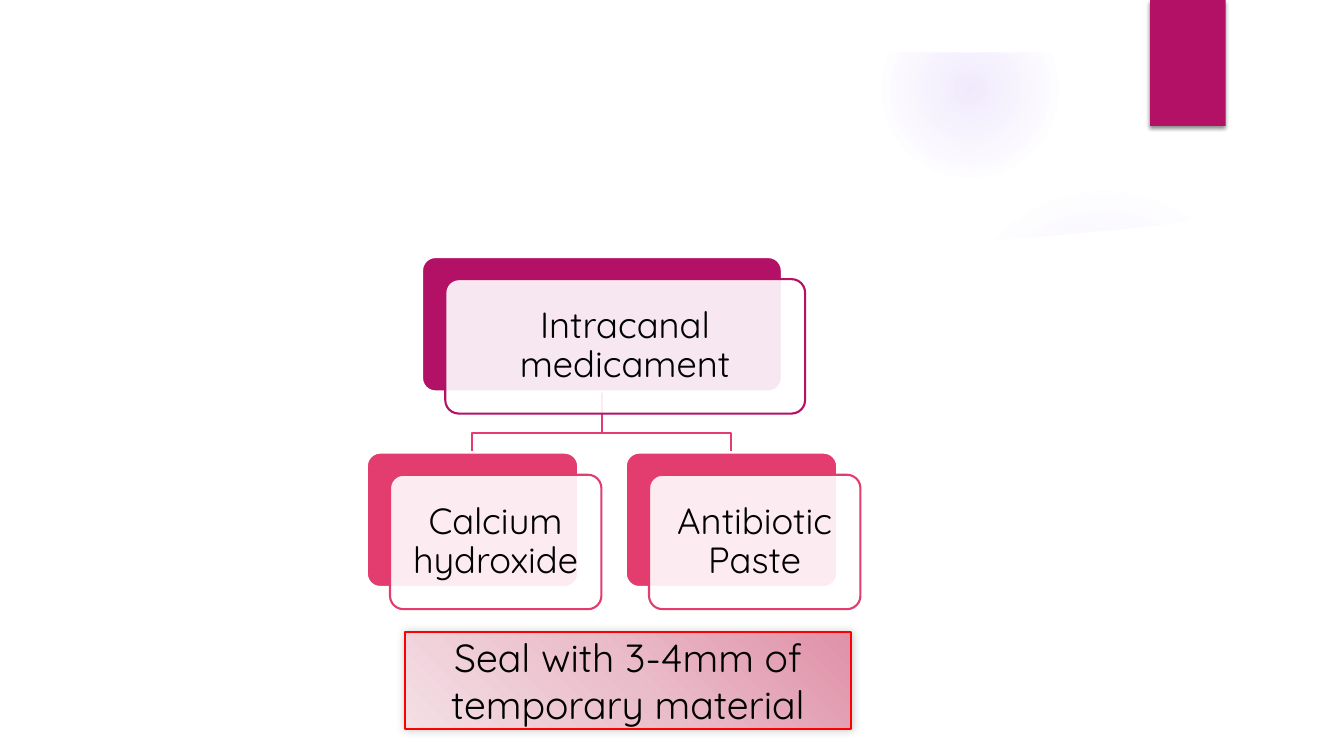
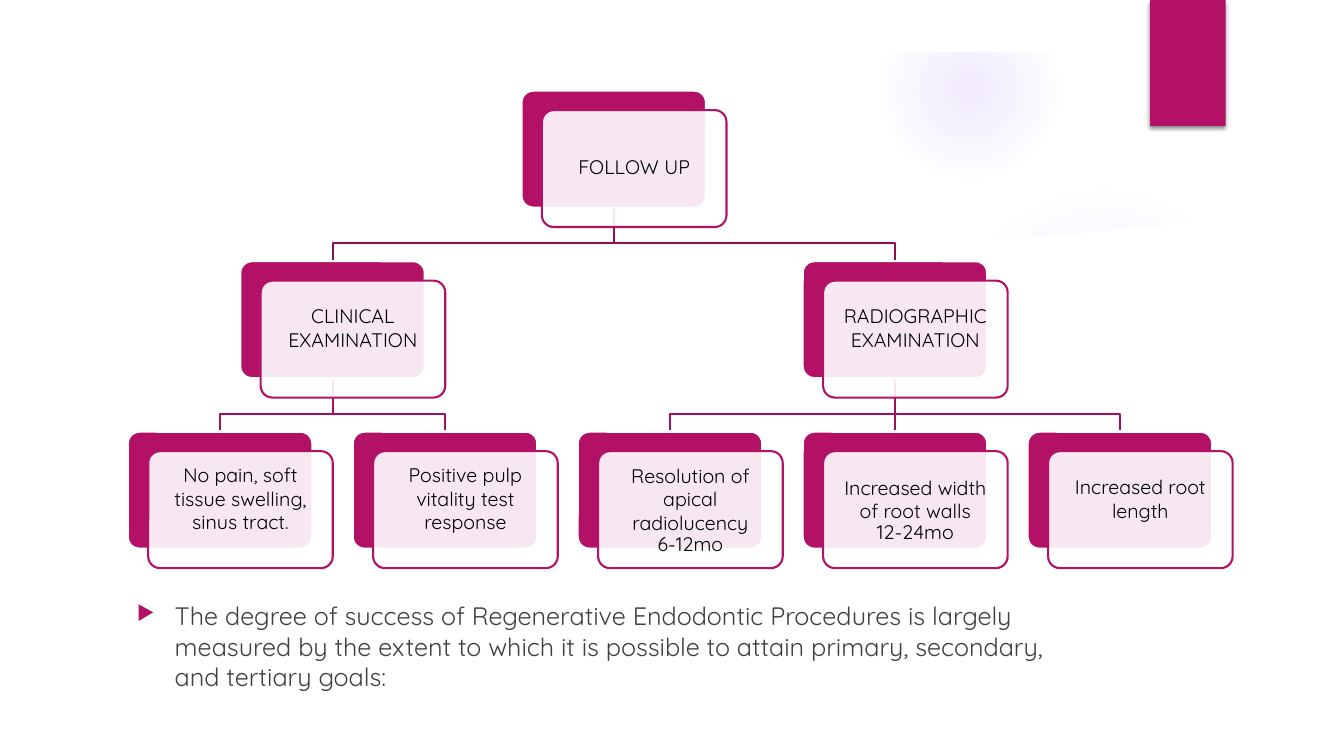
import dataclasses

import pptx
import pptx.dml.color
import pptx.enum.shapes
import pptx.enum.text
import pptx.oxml
import pptx.oxml.ns
import pptx.util
from lxml import etree

Pt = pptx.util.Pt
SHAPES = pptx.enum.shapes.MSO_SHAPE
COLOURS = {
    "accent": "B31166", "rose": "E33D6F", "trunk": "8F0E52", "branch": "A20F5D",
    "glow": "9B6BF2", "white": "FFFFFF", "black": "000000", "body": "404040",
    "red": "FF0000", "seal_dark": "E091A9", "seal_mid": "EABDCA", "seal_light": "F4DFE5",
}


@dataclasses.dataclass
class Node:
    """A card of a tree; raised text leaves one line free below it."""
    text: str
    children: tuple = ()
    raised: bool = False


@dataclasses.dataclass
class TreeStyle:
    first_leaf: float  # centre of the leftmost leaf
    leaf_pitch: float
    top: float
    level_pitch: float
    widths: tuple  # one per level
    height: float
    offset: tuple  # front panel against back panel
    fills: tuple  # one per level
    lines: tuple  # one per level with children
    elbow: float  # height of the drop above a child
    size: float
    margin: float


class Deck:
    FONT = "Quicksand"
    LINE = 1.5

    def __init__(self):
        self.presentation = pptx.Presentation()
        self.presentation.slide_width = Pt(960)
        self.presentation.slide_height = Pt(540)
        self.slide = None

    def rgb(self, name):
        return pptx.dml.color.RGBColor.from_string(COLOURS[name])

    def add_child(self, parent, tag, **attributes):
        child = etree.SubElement(parent, pptx.oxml.ns.qn(tag))
        for name, value in attributes.items():
            child.set(name, str(value))
        return child

    # Shared decoration
    def new_slide(self):
        self.slide = self.presentation.slides.add_slide(self.presentation.slide_layouts[6])
        for left, top, size, stops in (
            (677.5, 132, 222, ((0, 7), (36, 6), (69, 0))),
            (630, 0.5, 126, ((0, 14), (36, 7), (73, 0))),
        ):
            glow = self.shape(SHAPES.OVAL, left, top, size, size)
            self.radial(glow, [(at, "glow", alpha) for at, alpha in stops], (50, 50, 50, 50))
        # White areas that cut the glows
        self.shape(SHAPES.RECTANGLE, 630, 0, 126, 37.4, "white")
        curve = [(663, 174.2), (703, 172), (743, 169.2), (783.4, 165.6),
                 (824, 161.3), (864, 156.2), (904, 150.5)]
        self.outline(curve + [(904, 360), (663, 360)], fill="white")
        tab = self.shape(SHAPES.RECTANGLE, 821.5, 0, 54, 90, "accent")
        self.cast_shadow(tab, alpha=45, blur=3, distance=2, direction=90)

    # Shapes and lines
    def paint(self, shape, fill=None, line=None, alpha=100):
        shape.shadow.inherit = False
        if fill:
            shape.fill.solid()
            shape.fill.fore_color.rgb = self.rgb(fill)
            if alpha < 100:
                colour = shape.fill._xPr.find(".//" + pptx.oxml.ns.qn("a:srgbClr"))
                self.add_child(colour, "a:alpha", val=alpha * 1000)
        else:
            shape.fill.background()
        if line:
            shape.line.color.rgb = self.rgb(line)
            shape.line.width = Pt(self.LINE)
        else:
            shape.line.fill.background()
        return shape

    def shape(self, kind, left, top, width, height, fill=None, line=None, alpha=100):
        shape = self.slide.shapes.add_shape(kind, Pt(left), Pt(top), Pt(width), Pt(height))
        return self.paint(shape, fill, line, alpha)

    def outline(self, points, fill=None, line=None):
        points = [(Pt(x), Pt(y)) for x, y in points]
        builder = self.slide.shapes.build_freeform(*points[0])
        builder.add_line_segments(points[1:], close=fill is not None)
        return self.paint(builder.convert_to_shape(), fill, line)

    def vertical(self, x, top, bottom, colour):
        connector = self.slide.shapes.add_connector(
            pptx.enum.shapes.MSO_CONNECTOR.STRAIGHT, Pt(x), Pt(top), Pt(x), Pt(bottom))
        connector.line.color.rgb = self.rgb(colour)
        connector.line.width = Pt(self.LINE)
        self.add_child(connector._element.spPr, "a:effectLst")

    def radial(self, shape, stops, focus):
        gradient = pptx.oxml.parse_xml(
            "<a:gradFill %s rotWithShape='1'/>" % pptx.oxml.ns.nsdecls("a"))
        stop_list = self.add_child(gradient, "a:gsLst")
        for position, name, alpha in stops:
            stop = self.add_child(stop_list, "a:gs", pos=position * 1000)
            colour = self.add_child(stop, "a:srgbClr", val=COLOURS[name])
            if alpha < 100:
                self.add_child(colour, "a:alpha", val=alpha * 1000)
        circle = self.add_child(gradient, "a:path", path="circle")
        self.add_child(circle, "a:fillToRect",
                       **{side: value * 1000 for side, value in zip("ltrb", focus)})
        properties = shape._element.spPr
        properties.replace(properties.find(pptx.oxml.ns.qn("a:noFill")), gradient)

    def cast_shadow(self, shape, alpha, blur, distance, direction):
        effects = shape._element.spPr.find(pptx.oxml.ns.qn("a:effectLst"))
        shadow = self.add_child(effects, "a:outerShdw", blurRad=Pt(blur), dist=Pt(distance),
                                dir=direction * 60000, algn="ctr", rotWithShape=0)
        colour = self.add_child(shadow, "a:srgbClr", val=COLOURS["black"])
        self.add_child(colour, "a:alpha", val=alpha * 1000)

    # Text
    def style_text(self, frame, text, size, colour="black",
                   align=pptx.enum.text.PP_ALIGN.CENTER):
        frame.word_wrap = True
        frame.text = text
        for paragraph in frame.paragraphs:
            paragraph.alignment = align
            for run in paragraph.runs:
                run.font.name = self.FONT
                run.font.size = Pt(size)
                run.font.color.rgb = self.rgb(colour)

    def bullet(self, left, top, width, height, text, size):
        box = self.slide.shapes.add_textbox(Pt(left), Pt(top), Pt(width), Pt(height))
        frame = box.text_frame
        self.style_text(frame, text, size, "body", pptx.enum.text.PP_ALIGN.LEFT)
        properties = frame.paragraphs[0]._p.get_or_add_pPr()
        properties.set("marL", str(Pt(27)))
        properties.set("indent", str(-Pt(27)))
        colour = self.add_child(properties, "a:buClr")
        self.add_child(colour, "a:srgbClr", val=COLOURS["accent"])
        self.add_child(properties, "a:buSzPct", val=80000)
        self.add_child(properties, "a:buChar", char="▶")

    def callout(self, left, top, width, height, text, size):
        box = self.shape(SHAPES.RECTANGLE, left, top, width, height, line="red")
        stops = [(0, "seal_dark", 100), (50, "seal_mid", 100), (100, "seal_light", 100)]
        self.radial(box, stops, (100, 0, 0, 100))
        self.cast_shadow(box, alpha=20, blur=6, distance=0, direction=225)
        box.text_frame.vertical_anchor = pptx.enum.text.MSO_ANCHOR.MIDDLE
        self.style_text(box.text_frame, text, size)

    # Trees: each parent is centred over its children
    def card(self, node, centre, top, level, style):
        width, height, fill = style.widths[level], style.height, style.fills[level]
        left = centre - width / 2
        back = self.shape(SHAPES.ROUNDED_RECTANGLE, left, top, width, height, fill, "white")
        front = self.shape(SHAPES.ROUNDED_RECTANGLE, left + style.offset[0],
                           top + style.offset[1], width, height, "white", fill, 90)
        for panel in (back, front):
            panel.adjustments[0] = 0.1
        frame = front.text_frame
        frame.margin_left = frame.margin_right = frame.margin_top = Pt(style.margin)
        frame.margin_bottom = Pt(style.margin + (16 if node.raised else 0))
        frame.vertical_anchor = pptx.enum.text.MSO_ANCHOR.MIDDLE
        self.style_text(frame, node.text, style.size)
        if not node.raised:
            frame.paragraphs[-1].line_spacing = 0.9

    def tree(self, node, style, level=0, first_leaf=0):
        """Draws a node with all below it; returns its centre and the next free leaf."""
        top = style.top + level * style.level_pitch
        if node.children:
            centres, leaf = [], first_leaf
            for child in node.children:
                centre, leaf = self.tree(child, style, level + 1, leaf)
                centres.append(centre)
            centre = (centres[0] + centres[-1]) / 2
            child_top = top + style.level_pitch - 1
            bus = child_top - style.elbow
            colour = style.lines[level]
            self.outline([(centres[0], child_top), (centres[0], bus),
                          (centres[-1], bus), (centres[-1], child_top)], line=colour)
            self.vertical(centre, top + style.height, bus, colour)
            for inner in centres[1:-1]:
                self.vertical(inner, bus, child_top, colour)
        else:
            centre = style.first_leaf + first_leaf * style.leaf_pitch
            leaf = first_leaf + 1
        self.card(node, centre, top, level, style)
        return centre, leaf


def main():
    deck = Deck()

    # Slide 1: medicament
    deck.new_slide()
    deck.tree(
        Node("Intracanal medicament", (Node("Calcium hydroxide"), Node("Antibiotic Paste"))),
        TreeStyle(first_leaf=337.5, leaf_pitch=185, top=183.6, level_pitch=139.7,
                  widths=(257, 151), height=96, offset=(16.6, 15.8),
                  fills=("accent", "rose"), lines=("rose",), elbow=13, size=26, margin=8))
    deck.callout(289.4, 451.4, 318.2, 69.1, "Seal with 3-4mm of temporary material", 28)

    # Slide 2: follow up
    deck.new_slide()
    clinical = Node("CLINICAL EXAMINATION", (
        Node("No pain, soft tissue swelling, sinus tract.", raised=True),
        Node("Positive pulp vitality test response", raised=True)), raised=True)
    radiographic = Node("RADIOGRAPHIC EXAMINATION", (
        Node("Resolution of apical radiolucency\n6-12mo"),
        Node("Increased width of root walls\n12-24mo"),
        Node("Increased root length", raised=True)), raised=True)
    deck.tree(
        Node("FOLLOW UP", (clinical, radiographic)),
        TreeStyle(first_leaf=157.2, leaf_pitch=160.7, top=64.8, level_pitch=121.8,
                  widths=(131.8,) * 3, height=83.5, offset=(14.6, 13.9),
                  fills=("accent",) * 3, lines=("trunk", "branch"), elbow=12,
                  size=14, margin=4.4))
    deck.bullet(90.7, 425.5, 694.8, 75,
                "The degree of success of Regenerative Endodontic Procedures is largely "
                "measured by the extent to which it is possible to attain primary, "
                "secondary, and tertiary goals:", 18)

    deck.presentation.save("out.pptx")


if __name__ == "__main__":
    main()
